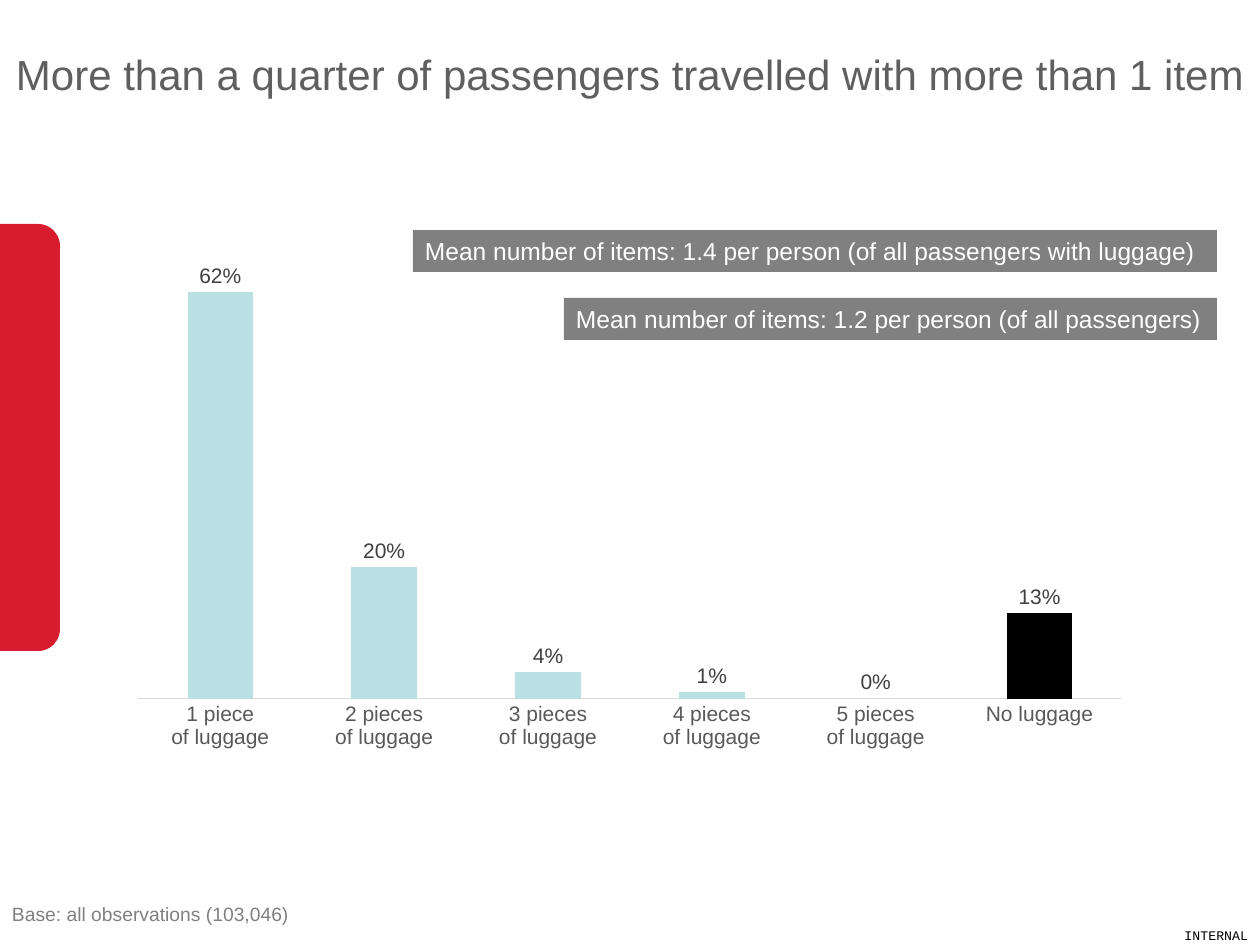
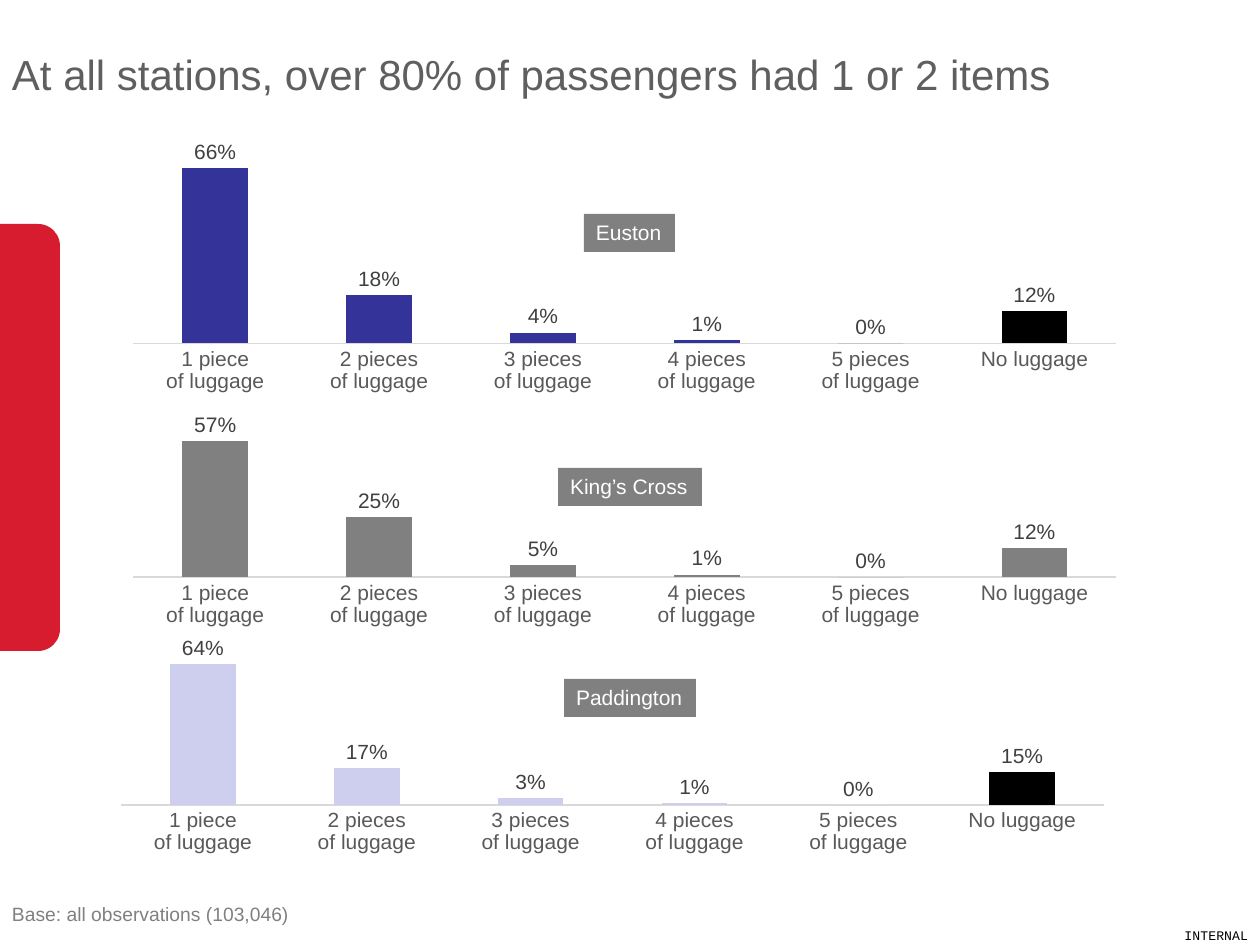
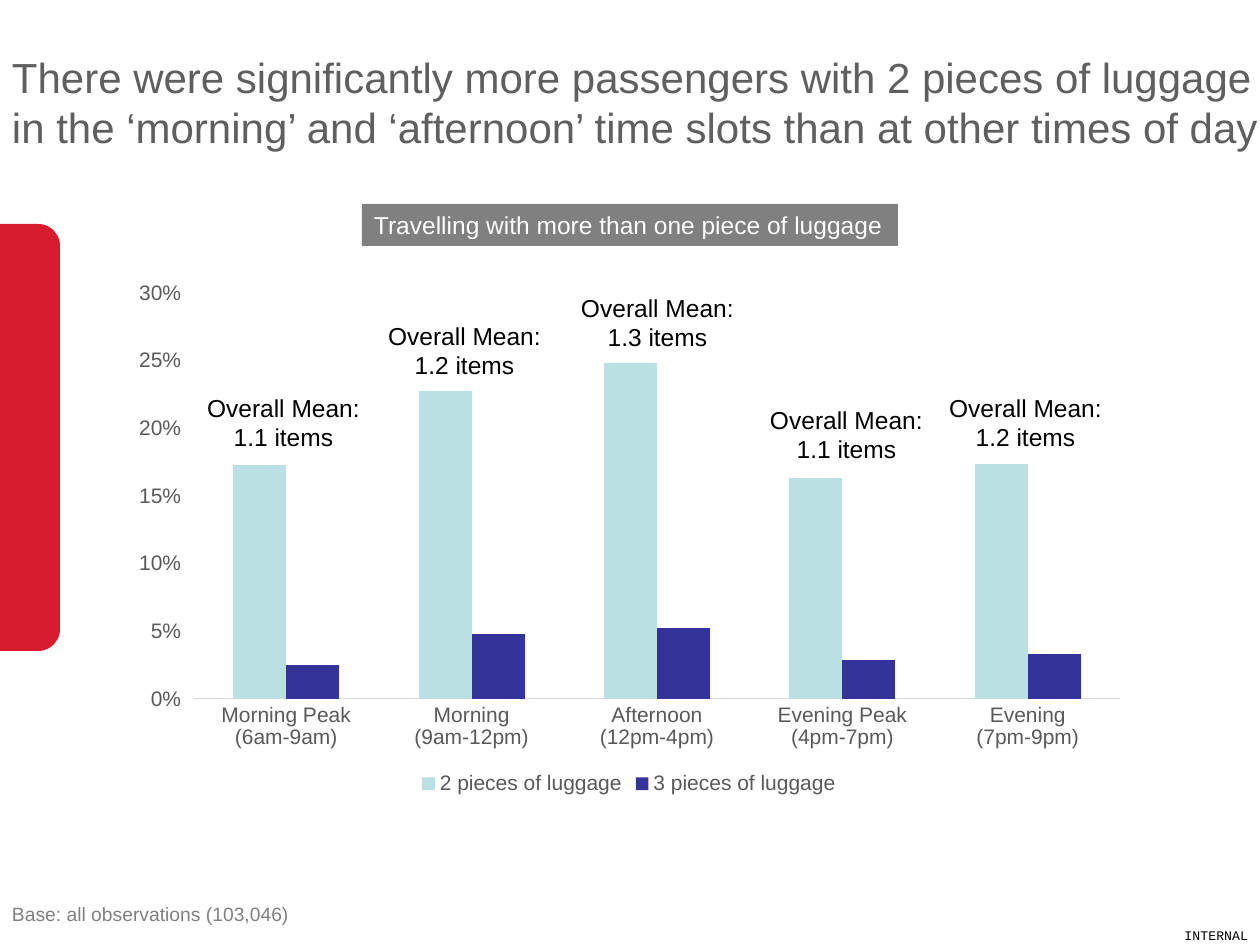
from lxml import etree
from pptx import Presentation
from pptx import util as u
from pptx.chart.data import CategoryChartData
from pptx.dml.color import RGBColor
from pptx.enum import chart as ch
from pptx.enum import shapes, text
from pptx.oxml import ns

PX = 914400 / 126
INSET = 12
RED, GREY, TITLE, AXIS, LABEL, RULE = "D61C2E", "808080", "5F5F5F", "595959", "404040", "D9D9D9"
AQUA, NAVY, LILAC, BLACK, WHITE = "BBE0E3", "333399", "CECEEF", "000000", "FFFFFF"
LEFT, CENTER, RIGHT = text.PP_ALIGN.LEFT, text.PP_ALIGN.CENTER, text.PP_ALIGN.RIGHT
TOP, MIDDLE = text.MSO_ANCHOR.TOP, text.MSO_ANCHOR.MIDDLE

PIECES = ["1 piece\nof luggage"] + [f"{n} pieces\nof luggage" for n in range(2, 6)] + ["No luggage"]
SLOTS = ["Morning Peak\n(6am-9am)", "Morning\n(9am-12pm)", "Afternoon\n(12pm-4pm)",
         "Evening Peak\n(4pm-7pm)", "Evening\n(7pm-9pm)"]
STATIONS = [
    ("Euston", (118, 141, 1022, 272), (0.015, 0.046, 0.962, 0.694),
     (0.66, 0.18, 0.04, 0.01, 0, 0.12), NAVY, BLACK, (584, 214, 91, 38)),
    ("King’s Cross", (118, 398, 1022, 267), (0.015, 0.046, 0.962, 0.625),
     (0.57, 0.25, 0.05, 0.01, 0, 0.12), GREY, GREY, (558, 468, 144, 38)),
    ("Paddington", (118, 638, 1022, 229), (0.003, 0.031, 0.962, 0.691),
     (0.64, 0.17, 0.03, 0.01, 0, 0.15), LILAC, BLACK, (564, 679, 132, 38)),
]
MEANS = [(194, 387, "1.1"), (375, 315, "1.2"), (568, 287, "1.3"), (757, 399, "1.1"), (936, 387, "1.2")]


def px(n):
    return u.Emu(round(n * PX))


def emu(box):
    return [px(n) for n in box]


def rgb(value):
    return RGBColor.from_string(value)


def set_attrs(obj, values):
    for name, value in values.items():
        setattr(obj, name, value)


def style_font(font, size, color, name="Arial"):
    set_attrs(font, {"size": u.Pt(size), "name": name, "bold": False})
    font.color.rgb = rgb(color)


def fill_text(sp, words, size, color, align=LEFT, anchor=TOP, font="Arial"):
    tf = sp.text_frame
    set_attrs(tf, {
        "word_wrap": True, "vertical_anchor": anchor,
        "margin_left": px(0 if align == CENTER else INSET),
        "margin_right": px(INSET if align == RIGHT else 0),
        "margin_top": px(6), "margin_bottom": px(6),
    })
    for i, line in enumerate(words.split("\n")):
        p = tf.add_paragraph() if i else tf.paragraphs[0]
        p.alignment = align
        r = p.add_run()
        r.text = line
        style_font(r.font, size, color, font)


def add_text(s, box, *args, **kwargs):
    fill_text(s.shapes.add_textbox(*emu(box)), *args, **kwargs)


def add_block(s, kind, box, color):
    sp = s.shapes.add_shape(kind, *emu(box))
    sp.shadow.inherit = False
    sp.fill.solid()
    sp.fill.fore_color.rgb = rgb(color)
    sp.line.fill.background()
    return sp


def add_banner(s, box, words, size=14):
    fill_text(add_block(s, shapes.MSO_SHAPE.RECTANGLE, box, GREY), words, size, WHITE)


def new_slide(prs, title, box=(0, 10, 1260, 127), align=LEFT):
    s = prs.slides.add_slide(prs.slide_layouts[6])
    tab = add_block(s, shapes.MSO_SHAPE.ROUNDED_RECTANGLE, (-69, 224, 129, 427), RED)
    tab.adjustments[0] = 0.17
    add_text(s, (0, 921, 1260, 29), "INTERNAL", 7.5, BLACK, RIGHT, font="Courier New")
    add_text(s, box, title, 24, TITLE, align, MIDDLE)
    add_text(s, (0, 896, 304, 37), "Base: all observations (103,046)", 11, GREY)
    return s


def set_plot_area(chart, area):
    plot_area = chart.element.find(".//" + ns.qn("c:plotArea"))
    for old in plot_area.findall(ns.qn("c:layout")):
        plot_area.remove(old)
    layout = etree.Element(ns.qn("c:layout"))
    manual = etree.SubElement(layout, ns.qn("c:manualLayout"))
    values = [("layoutTarget", "inner"), ("xMode", "edge"), ("yMode", "edge"), *zip("xywh", area)]
    for tag, value in values:
        etree.SubElement(manual, ns.qn("c:" + tag)).set("val", str(value))
    plot_area.insert(0, layout)


def add_columns(s, box, area, categories, series, top):
    data = CategoryChartData(number_format="0%")
    data.categories = categories
    for name, values, _ in series:
        data.add_series(name, values)
    chart = s.shapes.add_chart(ch.XL_CHART_TYPE.COLUMN_CLUSTERED, *emu(box), data).chart
    set_attrs(chart, {"has_title": False, "has_legend": False})
    style_font(chart.font, 10, BLACK)
    set_plot_area(chart, area)
    plot = chart.plots[0]
    set_attrs(plot, {"gap_width": 150, "overlap": 0, "vary_by_categories": False})
    for ser, (_, _, color) in zip(plot.series, series):
        ser.invert_if_negative = False
        ser.format.fill.solid()
        ser.format.fill.fore_color.rgb = rgb(color)
    axis = chart.category_axis
    set_attrs(axis, {"major_tick_mark": ch.XL_TICK_MARK.NONE, "has_major_gridlines": False})
    style_font(axis.tick_labels.font, 12, AXIS)
    axis.format.line.color.rgb = rgb(RULE)
    axis.format.line.width = u.Pt(0.75)
    set_attrs(chart.value_axis, {"minimum_scale": 0, "maximum_scale": top, "has_major_gridlines": False})
    return chart


def add_luggage_chart(s, box, area, values, color, last_color):
    chart = add_columns(s, box, area, PIECES, [("Series 1", values, color)], 0.7)
    chart.value_axis.visible = False
    plot = chart.plots[0]
    fill = plot.series[0].points[len(PIECES) - 1].format.fill
    fill.solid()
    fill.fore_color.rgb = rgb(last_color)
    plot.has_data_labels = True
    labels = plot.data_labels
    set_attrs(labels, {"show_value": True, "number_format": "0%", "number_format_is_linked": False,
                       "position": ch.XL_LABEL_POSITION.OUTSIDE_END})
    style_font(labels.font, 12, LABEL)


def add_time_chart(s, box):
    chart = add_columns(s, box, (0.074, 0.042, 0.907, 0.767), SLOTS, [
        ("2 pieces of luggage", (0.173, 0.228, 0.248, 0.163, 0.174), AQUA),
        ("3 pieces of luggage", (0.025, 0.048, 0.052, 0.029, 0.033), NAVY),
    ], 0.3)
    axis = chart.value_axis
    axis.major_unit = 0.05
    axis.format.line.fill.background()
    set_attrs(axis.tick_labels, {"number_format": "0%", "number_format_is_linked": False})
    style_font(axis.tick_labels.font, 12, AXIS)
    chart.has_legend = True
    set_attrs(chart.legend, {"position": ch.XL_LEGEND_POSITION.BOTTOM, "include_in_layout": False})
    style_font(chart.legend.font, 12, AXIS)


def overall_slide(prs):
    s = new_slide(prs, "More than a quarter of passengers travelled with more than 1 item", align=CENTER)
    add_luggage_chart(s, (118, 229, 1022, 529), (0.02, 0.02, 0.962, 0.868),
                      (0.62, 0.2, 0.04, 0.01, 0, 0.13), AQUA, BLACK)
    add_banner(s, (564, 298, 653, 42), "Mean number of items: 1.2 per person (of all passengers)")
    add_banner(s, (413, 230, 804, 42), "Mean number of items: 1.4 per person (of all passengers with luggage)")


def stations_slide(prs):
    s = new_slide(prs, "At all stations, over 80% of passengers had 1 or 2 items")
    for _, box, area, values, color, last_color, _ in STATIONS:
        add_luggage_chart(s, box, area, values, color, last_color)
    for name, *_, banner in STATIONS:
        add_banner(s, banner, name, 12)


def times_slide(prs):
    s = new_slide(prs, "There were significantly more passengers with 2 pieces of luggage in the ‘morning’ "
                       "and ‘afternoon’ time slots than at other times of day", (0, 26, 1260, 151))
    add_time_chart(s, (118, 271, 1022, 529))
    add_banner(s, (362, 204, 536, 42), "Travelling with more than one piece of luggage")
    for x, y, mean in MEANS:
        add_text(s, (x, y, 179, 72), f"Overall Mean:\n{mean} items", 14, BLACK, CENTER)


def main():
    prs = Presentation()
    set_attrs(prs, {"slide_width": px(1260), "slide_height": px(945)})
    for build in (overall_slide, stations_slide, times_slide):
        build(prs)
    prs.save("out.pptx")


if __name__ == "__main__":
    main()
